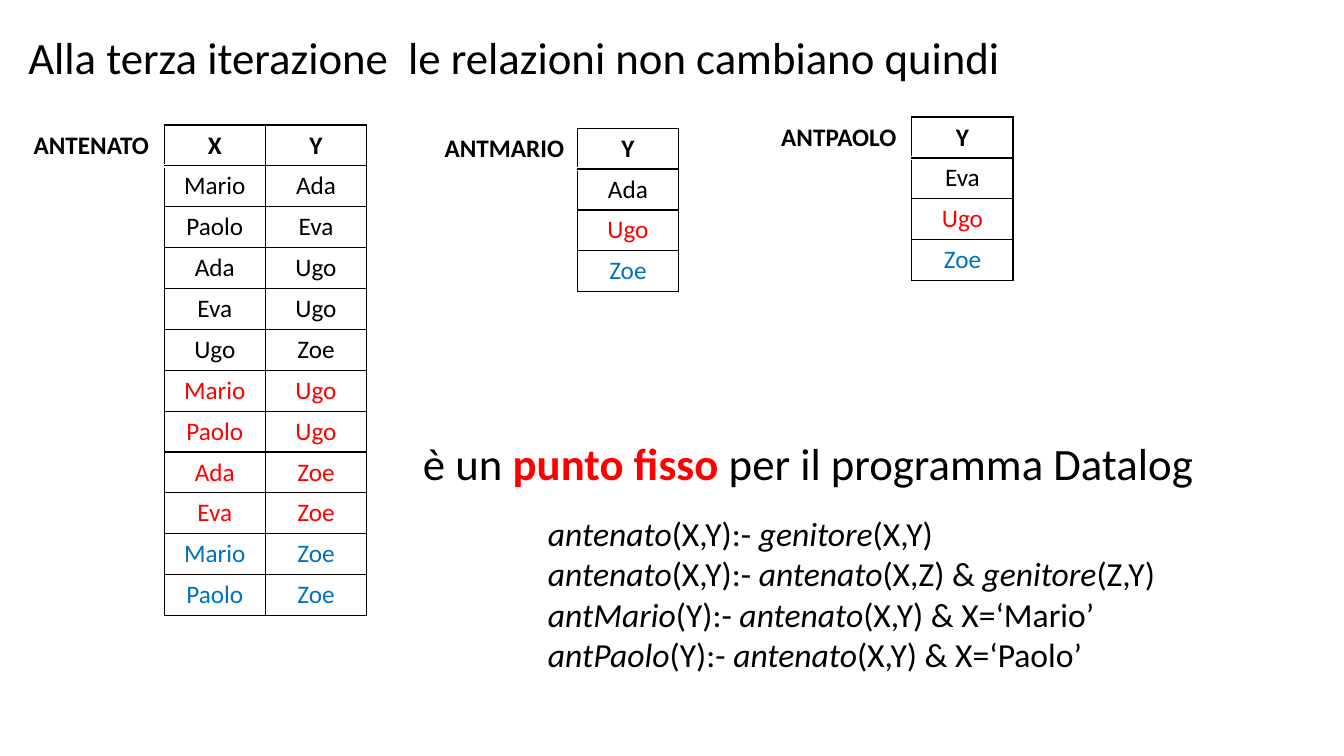
from lxml import etree
from pptx import Presentation
from pptx import util as u
from pptx.dml.color import RGBColor
from pptx.enum import text
from pptx.oxml import ns

BLACK = RGBColor(0x00, 0x00, 0x00)
WHITE = RGBColor(0xFF, 0xFF, 0xFF)
RED = RGBColor(0xFF, 0x00, 0x00)
BLUE = RGBColor(0x00, 0x70, 0xC0)

NAME_WIDTH, COLUMN_WIDTH, ROW_HEIGHT = 3.68, 2.55, 1.03

# Each relation: name, left, top, columns, tuples grouped by the iteration that adds them
RELATIONS = [
    ("ANTENATO", 0.46, 3.15, "X Y", [
        (BLACK, ["Mario Ada", "Paolo Eva", "Ada Ugo", "Eva Ugo", "Ugo Zoe"]),
        (RED, ["Mario Ugo", "Paolo Ugo", "Ada Zoe", "Eva Zoe"]),
        (BLUE, ["Mario Zoe", "Paolo Zoe"]),
    ]),
    ("ANTMARIO", 10.87, 3.23, "Y", [(BLACK, ["Ada"]), (RED, ["Ugo"]), (BLUE, ["Zoe"])]),
    ("ANTPAOLO", 19.3, 2.95, "Y", [(BLACK, ["Eva"]), (RED, ["Ugo"]), (BLUE, ["Zoe"])]),
]

RULES = [
    "*antenato*(X,Y):- *genitore*(X,Y)",
    "*antenato*(X,Y):- *antenato*(X,Z) &* genitore*(Z,Y)",
    "*antMario*(Y):- *antenato*(X,Y) & X=‘Mario’",
    "*antPaolo*(Y):- *antenato*(X,Y) & X=‘Paolo’",
]


class SlideBuilder:
    font = "Calibri"

    def __init__(self, prs):
        self.s = prs.slides.add_slide(prs.slide_layouts[5])

    def run(self, p, content, size, color=BLACK, **formats):
        r = p.add_run()
        r.text = content
        r.font.color.rgb = color
        for name, value in {"name": self.font, "size": u.Pt(size), **formats}.items():
            setattr(r.font, name, value)

    def fill_frame(self, tf, lines, size, emphasis):
        """Write one paragraph per line; parts between asterisks get the emphasis."""
        tf.word_wrap = True
        tf.vertical_anchor = text.MSO_ANCHOR.TOP
        tf.auto_size = text.MSO_AUTO_SIZE.NONE
        for i, line in enumerate(lines):
            p = tf.paragraphs[0] if i == 0 else tf.add_paragraph()
            p.alignment = text.PP_ALIGN.LEFT
            p.line_spacing = 1.0
            for j, part in enumerate(line.split("*")):
                if part:
                    self.run(p, part, size, **(emphasis if j % 2 else {}))

    def title(self, content, left, top, width, height):
        sp = self.s.shapes.title
        box = {"left": left, "top": top, "width": width, "height": height}
        for name, value in box.items():
            setattr(sp, name, u.Cm(value))
        self.fill_frame(sp.text_frame, [content], 32, {})

    def text(self, lines, left, top, width, height, size, **emphasis):
        sp = self.s.shapes.add_textbox(*map(u.Cm, (left, top, width, height)))
        self.fill_frame(sp.text_frame, lines, size, emphasis)

    def border(self, cell, side, color, points):
        tag = ns.qn(f"a:ln{side}")
        ln = etree.SubElement(cell._tc.get_or_add_tcPr(), tag, w=str(u.Pt(points)))
        fill = etree.SubElement(ln, ns.qn("a:solidFill"))
        etree.SubElement(fill, ns.qn("a:srgbClr"), val=str(color))

    def cell(self, cell, content, color, borders, bold):
        for side, (line_color, points) in borders.items():
            self.border(cell, side, line_color, points)
        cell.fill.background()
        p = cell.text_frame.paragraphs[0]
        p.alignment = text.PP_ALIGN.CENTER
        if content:
            self.run(p, content, 18, color, bold=bold)

    def relation(self, name, left, top, header, groups):
        """Draw a relation as a table whose first column only carries its name."""
        rows = [(BLACK, [name, *header.split()])]
        rows += [(color, ["", *row.split()]) for color, group in groups for row in group]
        columns = len(rows[0][1])
        width = NAME_WIDTH + COLUMN_WIDTH * (columns - 1)
        size = map(u.Cm, (left, top, width, ROW_HEIGHT * len(rows)))
        table = self.s.shapes.add_table(len(rows), columns, *size).table
        table.first_row = table.horz_banding = False
        for i, column in enumerate(table.columns):
            column.width = u.Cm(COLUMN_WIDTH if i else NAME_WIDTH)
        for i, (color, values) in enumerate(rows):
            table.rows[i].height = u.Cm(ROW_HEIGHT)
            for j, value in enumerate(values):
                borders = dict.fromkeys("LRTB", (BLACK, 1))
                if j == 0:
                    borders.update(L=(WHITE, 1), T=(WHITE, 1), B=(WHITE, 1 if i else 3))
                self.cell(table.cell(i, j), value, color, borders, bold=i == 0)


def main():
    prs = Presentation()
    prs.slide_width, prs.slide_height = u.Cm(33.87), u.Cm(19.05)
    slide = SlideBuilder(prs)
    slide.title("Alla terza iterazione  le relazioni non cambiano quindi",
                0.46, 0.61, 30.61, 1.63)
    for relation in RELATIONS:
        slide.relation(*relation)
    slide.text(["è un *punto fisso *per il programma Datalog"],
               10.41, 10.85, 20.65, 1.63, 32, color=RED, bold=True)
    slide.text(RULES, 13.56, 12.8, 16.94, 4.37, 24, italic=True)
    prs.save("out.pptx")


if __name__ == "__main__":
    main()
